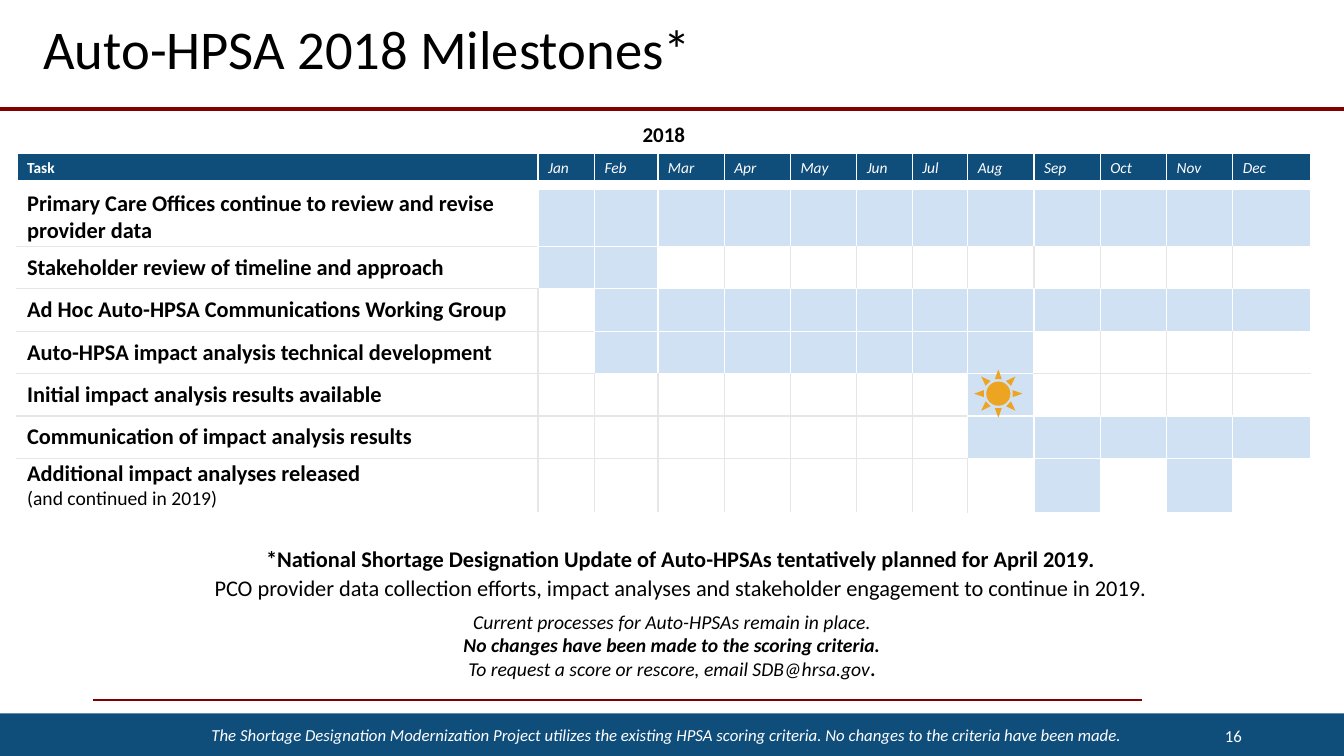
from dataclasses import dataclass
from itertools import accumulate

from lxml.etree import SubElement
from pptx import Presentation
from pptx.dml.color import RGBColor
from pptx.enum.shapes import MSO_CONNECTOR as Connector, MSO_SHAPE as Preset
from pptx.enum.text import MSO_ANCHOR as Anchor, PP_ALIGN as Align
from pptx.oxml import parse_xml
from pptx.oxml.ns import nsdecls, qn
from pptx.util import Cm, Pt

BLACK = RGBColor(0x00, 0x00, 0x00)
WHITE = RGBColor(0xFF, 0xFF, 0xFF)
NAVY = RGBColor(0x0F, 0x4D, 0x7B)
MAROON = RGBColor(0x80, 0x00, 0x00)
PALE_BLUE = RGBColor(0xD0, 0xE1, 0xF4)
GREY = RGBColor(0xE7, 0xE6, 0xE6)
SUN_YELLOW = RGBColor(0xEC, 0xA4, 0x21)

SLIDE_WIDTH, SLIDE_HEIGHT = 33.87, 19.05
MONTHS = "Jan Feb Mar Apr May Jun Jul Aug Sep Oct Nov Dec".split()
COLUMN_WIDTHS = [13.13, 1.42, 1.6, 1.67, 1.67, 1.67, 1.4, 1.4] + [1.67] * 4 + [0.69, 1.27]
ROW_HEIGHTS = [0.89, 0.89, 1.43] + [1.07] * 5 + [1.33]
FIRST_TASK_ROW = 2


@dataclass
class Words:
    text: str
    size: float
    bold: bool = False
    italic: bool = False
    color: RGBColor = BLACK


TASKS = [
    ("Primary Care Offices continue to review and revise provider data", range(1, 13)),
    ("Stakeholder review of timeline and approach", range(1, 3)),
    ("Ad Hoc Auto-HPSA Communications Working Group", range(2, 13)),
    ("Auto-HPSA impact analysis technical development", range(2, 9)),
    ("Initial impact analysis results available", [8]),
    ("Communication of impact analysis results", range(8, 13)),
    ("Additional impact analyses released", [9, 11]),
]


class MilestoneSlide:
    font = "Calibri"

    def __init__(self, presentation):
        self.slide = presentation.slides.add_slide(presentation.slide_layouts[6])

    def fill_text(self, text_frame, lines, align=Align.LEFT, spacing=None):
        for index, line in enumerate(lines):
            paragraph = text_frame.add_paragraph() if index else text_frame.paragraphs[0]
            paragraph.alignment = align
            if spacing:
                paragraph.line_spacing = spacing
            for words in line:
                run = paragraph.add_run()
                run.text = words.text
                font = run.font
                font.name, font.size = self.font, Pt(words.size)
                font.bold, font.italic = words.bold, words.italic
                font.color.rgb = words.color

    def text(self, left, top, width, height, lines, anchor=Anchor.TOP, **layout):
        box = self.slide.shapes.add_textbox(Cm(left), Cm(top), Cm(width), Cm(height))
        box.text_frame.word_wrap = True
        box.text_frame.vertical_anchor = anchor
        self.fill_text(box.text_frame, lines, **layout)

    def shape(self, preset, left, top, width, height, color):
        shape = self.slide.shapes.add_shape(preset, Cm(left), Cm(top), Cm(width), Cm(height))
        shape.shadow.inherit = False
        shape.fill.solid()
        shape.fill.fore_color.rgb = color
        shape.line.fill.background()

    def rule(self, left, right, y, color, weight):
        line = self.slide.shapes.add_connector(
            Connector.STRAIGHT, Cm(left), Cm(y), Cm(right), Cm(y))
        line.line.color.rgb = color
        line.line.width = Pt(weight)
        SubElement(line._element.spPr, qn("a:effectLst"))

    def table(self, left, top, column_widths, row_heights):
        frame = self.slide.shapes.add_table(
            len(row_heights), len(column_widths), Cm(left), Cm(top),
            Cm(sum(column_widths)), Cm(sum(row_heights)))
        table = frame.table
        table.first_row = table.horz_banding = False
        for column, width in zip(table.columns, column_widths):
            column.width = Cm(width)
        for row, height in zip(table.rows, row_heights):
            row.height = Cm(height)
        return table

    def cell(self, cell, fill, borders):
        if fill is None:
            cell.fill.background()
        else:
            cell.fill.solid()
            cell.fill.fore_color.rgb = fill
        properties = cell._tc.get_or_add_tcPr()
        for index, (side, color) in enumerate(zip("LRTB", borders)):
            properties.insert(index, parse_xml(
                f'<a:ln{side} {nsdecls("a")} w="12700"><a:solidFill>'
                f'<a:srgbClr val="{color}"/></a:solidFill></a:ln{side}>'))


def is_shaded(row, column):
    return row >= FIRST_TASK_ROW and column in TASKS[row - FIRST_TASK_ROW][1]


def is_plain(row, column):
    inside = FIRST_TASK_ROW <= row < len(ROW_HEIGHTS) and 0 <= column <= len(MONTHS)
    return inside and not is_shaded(row, column)


def cell_fill(row, column):
    if row == 1:
        return NAVY
    return PALE_BLUE if is_shaded(row, column) else None


def cell_borders(row, column):
    neighbours = [(row, column - 1), (row, column + 1), (row - 1, column), (row + 1, column)]
    return [GREY if is_plain(row, column) and is_plain(*neighbour) else WHITE
            for neighbour in neighbours]


def add_timeline(page):
    left, top = 0.43, 2.97
    table = page.table(left, top, COLUMN_WIDTHS, ROW_HEIGHTS)
    last_row, last_column = len(ROW_HEIGHTS) - 1, len(COLUMN_WIDTHS) - 1
    for row in range(last_row + 1):
        for column in range(last_column + 1):
            page.cell(table.cell(row, column), cell_fill(row, column), cell_borders(row, column))
    table.cell(0, 0).merge(table.cell(0, last_column))
    for row in range(1, last_row):
        table.cell(row, last_column - 1).merge(table.cell(row, last_column))

    page.fill_text(table.cell(0, 0).text_frame, [[Words("2018", 15, bold=True)]], Align.CENTER)
    page.fill_text(table.cell(1, 0).text_frame, [[Words("Task", 11, bold=True, color=WHITE)]])
    for column, month in enumerate(MONTHS, 1):
        page.fill_text(table.cell(1, column).text_frame,
                       [[Words(month, 11, italic=True, color=WHITE)]])
    for row, (task, _) in enumerate(TASKS, FIRST_TASK_ROW):
        cell = table.cell(row, 0)
        cell.vertical_anchor = Anchor.MIDDLE
        cell.margin_top = cell.margin_bottom = Cm(0.03)
        lines = [[Words(task, 16, bold=True)]]
        if row == last_row:
            lines.append([Words("(and continued in 2019)", 14)])
        page.fill_text(cell.text_frame, lines)

    sun_size = 1.22
    august = [left + edge for edge in accumulate(COLUMN_WIDTHS)][7]
    results = [top + edge for edge in accumulate(ROW_HEIGHTS)][5]
    page.shape(Preset.SUN, august + 0.16, results - 0.08, sun_size, sun_size, SUN_YELLOW)


def main():
    presentation = Presentation()
    presentation.slide_width, presentation.slide_height = Cm(SLIDE_WIDTH), Cm(SLIDE_HEIGHT)
    page = MilestoneSlide(presentation)

    page.shape(Preset.RECTANGLE, 0, 17.98, SLIDE_WIDTH, 1.07, NAVY)
    page.rule(2.34, 28.78, 17.65, MAROON, 1.5)
    page.rule(0, SLIDE_WIDTH, 2.74, MAROON, 3)
    add_timeline(page)

    page.text(0.43, 13.54, 33.45, 2.51, [
        [Words("*National Shortage Designation Update of Auto-HPSAs tentatively planned "
               "for April 2019.", 16, bold=True)],
        [Words("PCO provider data collection efforts, impact analyses and stakeholder "
               "engagement to continue in 2019.", 16)],
    ], align=Align.CENTER, spacing=1.1)
    page.text(6.88, 15.24, 20.12, 2.64, [
        [Words("Current processes for Auto-HPSAs remain in place.", 14, italic=True)],
        [Words("No changes have been made to the scoring criteria.", 14, True, True)],
        [Words("To request a score or rescore, email SDB@hrsa.gov", 14, italic=True),
         Words(".", 14, True, True)],
    ], align=Align.CENTER)
    page.text(0.84, 0.43, 30.05, 1.8, [[Words("Auto-HPSA 2018 Milestones*", 39)]], spacing=0.9)
    page.rule(0.43, 33.66, 4.65, WHITE, 6)
    page.text(5.08, 18.14, 23.7, 0.9, [
        [Words("The Shortage Designation Modernization Project utilizes the existing HPSA "
               "scoring criteria. No changes to the criteria have been made.",
               12, italic=True, color=WHITE)]])
    page.text(23.93, 18.03, 7.62, 1.02, [[Words("16", 12, color=WHITE)]],
              anchor=Anchor.MIDDLE, align=Align.RIGHT)

    presentation.save("out.pptx")


if __name__ == "__main__":
    main()
